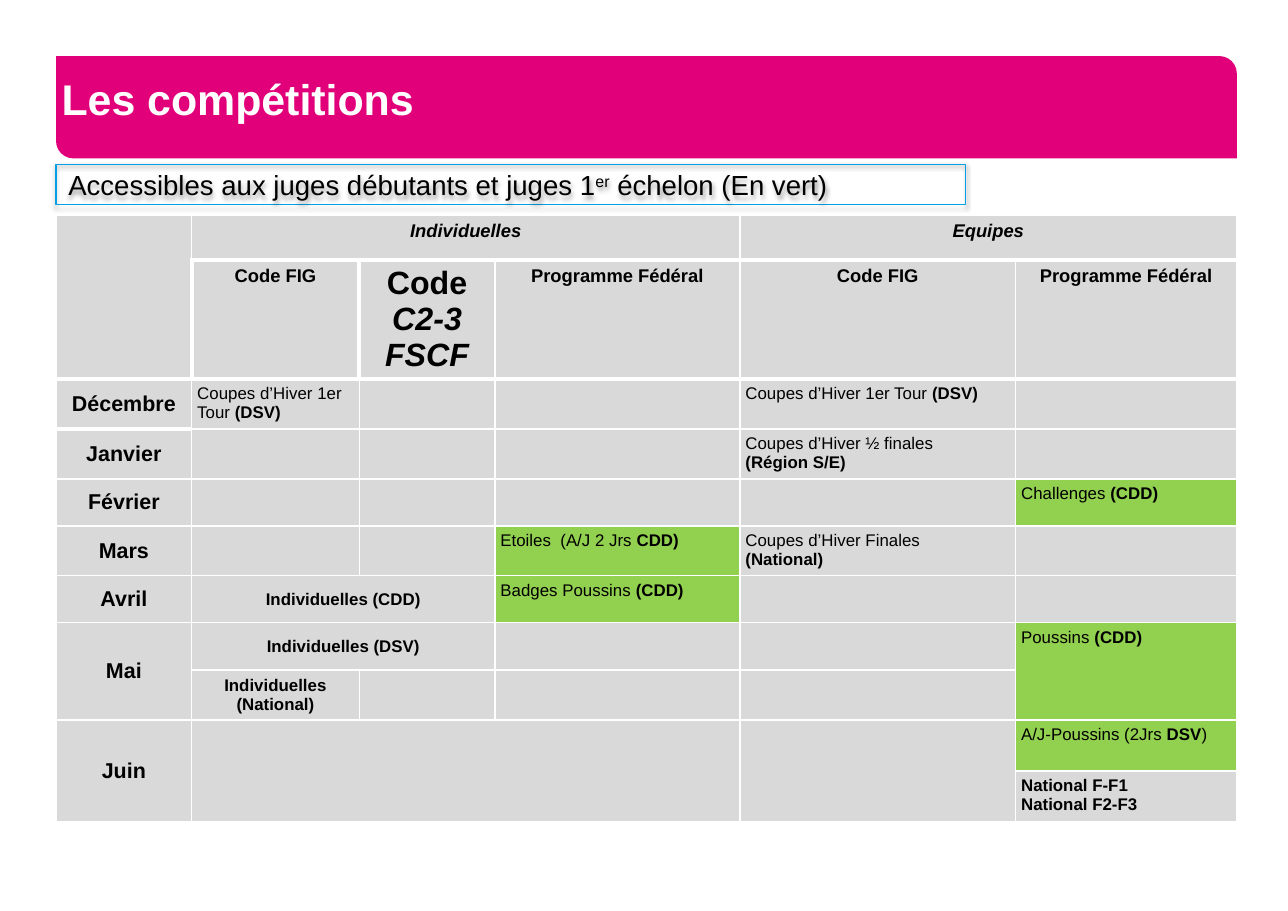
from lxml import etree
from pptx import Presentation
from pptx.dml.color import RGBColor
from pptx.enum import shapes, text
from pptx.oxml import ns
from pptx.util import Pt

FONT = "Arial"
GREY, GREEN, BLACK, WHITE = "D9D9D9", "92D050", "000000", "FFFFFF"
LEFT, WIDTH, INSET = 36.6, 771, 3.6

COLS = [88.6, 109.4, 88.6, 160, 180, 144.4]
ROWS = [29.4, 77.7, 32.6, 32.6, 30.6, 32.6, 30.6, 31, 32.6, 33.3, 33.3]
MERGES = [(0, 0, 1, 0), (0, 1, 0, 3), (0, 4, 0, 5), (6, 1, 6, 2),
          (7, 0, 8, 0), (7, 1, 7, 2), (7, 5, 8, 5),
          (9, 0, 10, 0), (9, 1, 10, 3), (9, 4, 10, 4)]
GREEN_CELLS = {(4, 5), (5, 3), (6, 3), (7, 5), (9, 5)}

# Starred parts are italic in the two header rows, bold below
CELLS = {
    (0, 1): "*Individuelles*", (0, 4): "*Equipes*",
    (1, 1): "Code FIG", (1, 2): "Code *C2-3 FSCF*", (1, 3): "Programme Fédéral",
    (1, 4): "Code FIG", (1, 5): "Programme Fédéral",
    (2, 0): "*Décembre*", (3, 0): "*Janvier*", (4, 0): "*Février*",
    (5, 0): "*Mars*", (6, 0): "*Avril*", (7, 0): "*Mai*", (9, 0): "*Juin*",
    (2, 1): "Coupes d’Hiver 1er Tour *(DSV)*",
    (2, 4): "Coupes d’Hiver 1er Tour *(DSV)*",
    (3, 4): "Coupes d’Hiver ½ finales\n*(Région S/E)*",
    (4, 5): "Challenges *(CDD)*",
    (5, 3): "Etoiles  (A/J 2 Jrs *CDD)*",
    (5, 4): "Coupes d’Hiver Finales\n*(National)*",
    (6, 1): "*Individuelles (CDD)*", (6, 3): "Badges Poussins *(CDD)*",
    (7, 1): "*Individuelles (DSV)*", (7, 5): "Poussins *(CDD)*",
    (8, 1): "*Individuelles (National)*",
    (9, 5): "A/J-Poussins (2Jrs *DSV*)",
    (10, 5): "*National F-F1*\n*National F2-F3*",
}


def color(hex_string):
    return RGBColor.from_string(hex_string)


def style_run(r, size, hex_string=BLACK, bold=False, italic=False):
    f = r.font
    f.name, f.size, f.bold, f.italic = FONT, Pt(size), bold, italic
    f.color.rgb = color(hex_string)


def set_insets(box):
    box.margin_left = box.margin_right = Pt(INSET)
    box.margin_top = box.margin_bottom = Pt(INSET)


def add_soft_shadow(sp):
    effects = etree.SubElement(sp._element.spPr, ns.qn("a:effectLst"))
    shadow = etree.SubElement(effects, ns.qn("a:outerShdw"),
                              blurRad=str(Pt(3)), dist=str(Pt(1.8)),
                              dir="5400000", rotWithShape="0")
    clr = etree.SubElement(shadow, ns.qn("a:srgbClr"), val=BLACK)
    etree.SubElement(clr, ns.qn("a:alpha"), val="35000")


def add_title(s):
    place = Pt(LEFT), Pt(36.6), Pt(WIDTH), Pt(66.8)
    band = s.shapes.add_shape(shapes.MSO_SHAPE.ROUND_2_DIAG_RECTANGLE, *place)
    band.adjustments[0], band.adjustments[1] = 0, 0.17
    band.shadow.inherit = False
    band.fill.solid()
    band.fill.fore_color.rgb = color("E2007A")
    band.line.fill.background()

    title = s.shapes.title
    s.shapes._spTree.append(title._element)  # bring in front of the band
    title.left, title.top, title.width, title.height = place
    tf = title.text_frame
    tf.text = "Les compétitions"
    tf.auto_size = text.MSO_AUTO_SIZE.NONE
    tf.vertical_anchor = text.MSO_ANCHOR.MIDDLE
    set_insets(tf)
    p = tf.paragraphs[0]
    p.alignment = text.PP_ALIGN.LEFT
    p.line_spacing = Pt(22)
    style_run(p.runs[0], 28, WHITE, bold=True)


def add_subtitle(s):
    frame = s.shapes.add_shape(shapes.MSO_SHAPE.RECTANGLE,
                               Pt(LEFT), Pt(107.2), Pt(594), Pt(26.3))
    frame.fill.background()
    frame.line.color.rgb = color("059FE2")
    frame.line.width = Pt(0.75)
    add_soft_shadow(frame)

    label = s.shapes.add_textbox(Pt(41), Pt(106.6), Pt(586), Pt(27.4))
    add_soft_shadow(label)
    tf = label.text_frame
    tf.word_wrap = True
    tf.vertical_anchor = text.MSO_ANCHOR.MIDDLE
    set_insets(tf)
    p = tf.paragraphs[0]
    for part in ("Accessibles aux juges débutants et juges 1", "er",
                 " échelon (En vert)"):
        r = p.add_run()
        r.text = part
        style_run(r, 18)
    p.runs[1].font._element.set("baseline", "30000")


def set_borders(cell, row, col):
    def thick_below(r):
        return r in (0, 1) or (r, col) == (2, 0)

    thick = {"L": row == 1 and col in (1, 2), "R": row == 1 and col in (0, 1),
             "T": thick_below(row - 1), "B": thick_below(row)}
    tc_pr = cell._tc.get_or_add_tcPr()
    for side, is_thick in thick.items():
        ln = etree.SubElement(tc_pr, ns.qn("a:ln" + side),
                              w=str(Pt(3 if is_thick else 1)))
        fill = etree.SubElement(ln, ns.qn("a:solidFill"))
        etree.SubElement(fill, ns.qn("a:srgbClr"), val=WHITE)


def fill_cell(cell, row, col):
    header, month = row < 2, col == 0
    centred = month or (col == 1 and row >= 6)
    big_code = (row, col) == (1, 2)
    size = 21 if big_code else 12 if header else 14 if month else 11
    if centred:
        cell.vertical_anchor = text.MSO_ANCHOR.MIDDLE
    tf = cell.text_frame
    for i, line in enumerate(CELLS[row, col].split("\n")):
        p = tf.add_paragraph() if i else tf.paragraphs[0]
        if header or centred:
            p.alignment = text.PP_ALIGN.CENTER
        if big_code:
            p.line_spacing = Pt(23.5)
        for j, part in enumerate(line.split("*")):
            if part:
                r = p.add_run()
                r.text = part
                starred = j % 2 == 1
                style_run(r, size, bold=header or starred,
                          italic=header and starred)


def add_calendar(s):
    frame = s.shapes.add_table(len(ROWS), len(COLS), Pt(LEFT), Pt(140.4),
                               Pt(WIDTH), Pt(sum(ROWS)))
    table = frame.table
    table.first_row = table.horz_banding = False
    for column, width in zip(table.columns, COLS):
        column.width = Pt(width)
    for table_row, height in zip(table.rows, ROWS):
        table_row.height = Pt(height)
    for top, left, bottom, right in MERGES:
        table.cell(top, left).merge(table.cell(bottom, right))

    for row in range(len(ROWS)):
        for col in range(len(COLS)):
            cell = table.cell(row, col)
            set_insets(cell)
            set_borders(cell, row, col)
            cell.fill.solid()
            cell.fill.fore_color.rgb = color(
                GREEN if (row, col) in GREEN_CELLS else GREY)
            if (row, col) in CELLS:
                fill_cell(cell, row, col)


def main():
    prs = Presentation()
    prs.slide_width, prs.slide_height = Pt(841), Pt(594.7)
    s = prs.slides.add_slide(prs.slide_layouts[5])
    add_title(s)
    add_calendar(s)
    add_subtitle(s)
    prs.save("out.pptx")


if __name__ == "__main__":
    main()
